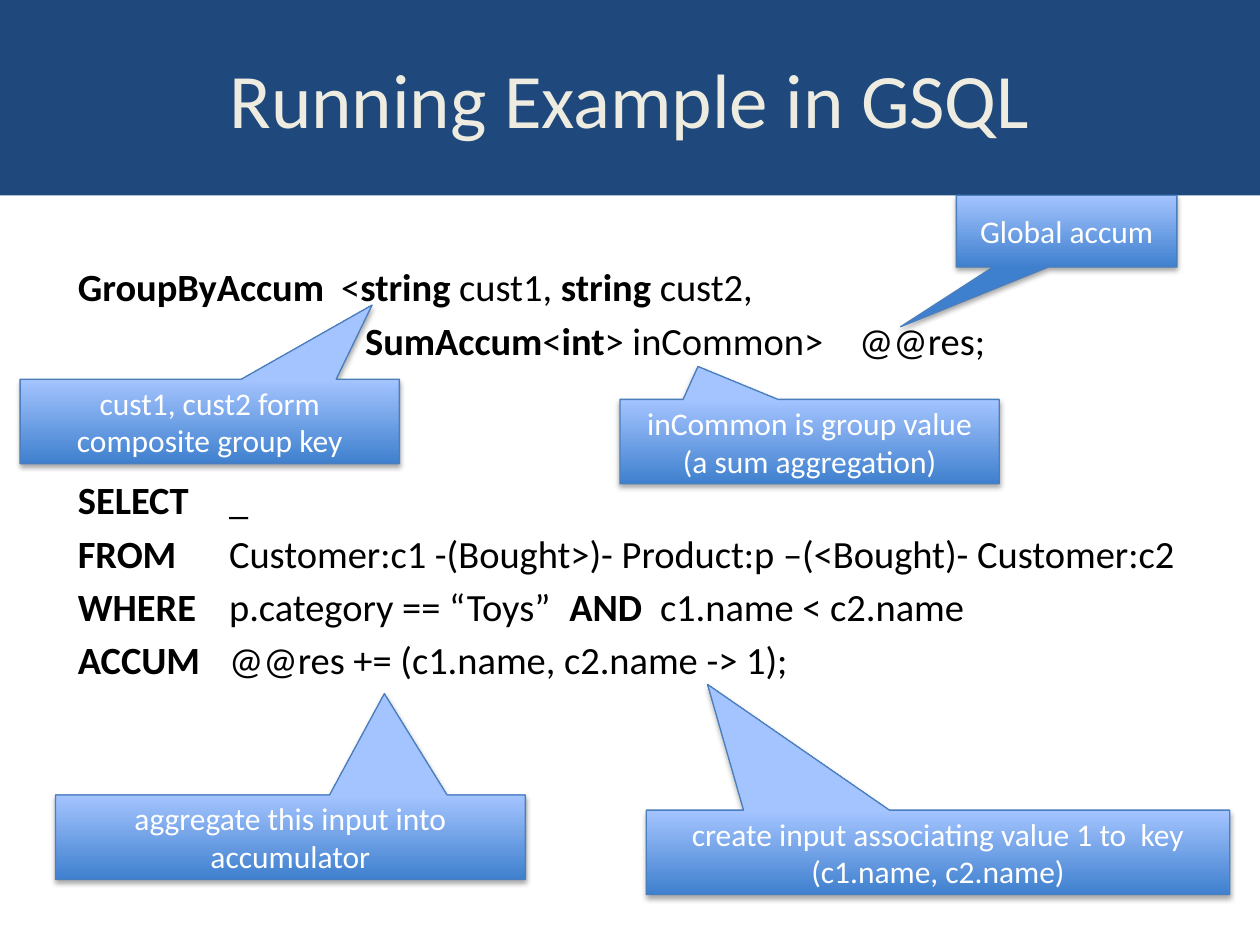
from lxml.etree import SubElement
from pptx import Presentation
from pptx.dml.color import RGBColor
from pptx.enum.shapes import MSO_SHAPE
from pptx.enum.text import MSO_ANCHOR, PP_ALIGN
from pptx.oxml.ns import qn
from pptx.util import Inches, Pt

COLORS = {
    "banner": "1F497D",
    "heading": "EEECE1",
    "code": "000000",
    "callout_low": "3F80CE",
    "callout_high": "A4C4FF",
    "callout_edge": "4B7EBC",
    "callout_text": "FFFFFF",
    "shadow": "000000",
}

CLAUSE_TAB = 1.2
BLOCK_GAP = 65

# Each line: space before in points, tab stops in inches, (text, bold) runs.
CODE_LINES = [
    (0, [2.09], [("GroupByAccum", True), ("\t<", False), ("string", True),
                 (" cust1, ", False), ("string", True), (" cust2,", False)]),
    (4, [2.28, 6.2], [("\t", False), ("SumAccum", True), ("<", False), ("int", True),
                      ("> inCommon>\t@@res;", False)]),
    (BLOCK_GAP, [CLAUSE_TAB], [("SELECT", True), ("\t_", False)]),
    (4, [CLAUSE_TAB], [("FROM", True),
                       ("\tCustomer:c1 -(Bought>)- Product:p –(<Bought)- Customer:c2", False)]),
    (4, [CLAUSE_TAB, 3.9, 4.62], [("WHERE", True), ("\tp.category == “Toys”", False),
                                  ("\tAND", True), ("\tc1.name < c2.name", False)]),
    (4, [CLAUSE_TAB], [("ACCUM", True), ("\t@@res += (c1.name, c2.name -> 1);", False)]),
]

CALLOUTS = [
    ("Global accum", (7.59, 1.55, 1.75, 0.57), (-0.753, 1.331)),
    ("cust1, cust2 form composite group key", (0.16, 3.01, 3.01, 0.67), (0.428, -1.378)),
    ("inCommon is group value (a sum aggregation)", (4.92, 3.17, 3.01, 0.67), (-0.294, -0.89)),
    ("create input associating value 1 to  key (c1.name, c2.name)",
     (5.13, 6.43, 4.63, 0.67), (-0.395, -1.989)),
    ("aggregate this input into accumulator", (0.44, 6.31, 3.73, 0.67), (0.2, -1.701)),
]


class SlideBuilder:
    """Holds the text style and the slide being built."""

    def __init__(self, slide, font="Calibri"):
        self.slide = slide
        self.font = font

    def color(self, name):
        return RGBColor.from_string(COLORS[name])

    def run(self, paragraph, text, size, color, bold=False):
        run = paragraph.add_run()
        run.text = text
        run.font.name = self.font
        run.font.size = Pt(size)
        run.font.bold = bold
        run.font.color.rgb = self.color(color)

    def shape(self, preset, box, text, size, color):
        shape = self.slide.shapes.add_shape(preset, *map(Inches, box))
        shape.shadow.inherit = False
        frame = shape.text_frame
        frame.word_wrap = True
        frame.vertical_anchor = MSO_ANCHOR.MIDDLE
        paragraph = frame.paragraphs[0]
        paragraph.alignment = PP_ALIGN.CENTER
        self.run(paragraph, text, size, color)
        return shape

    def banner(self, text, box):
        banner = self.shape(MSO_SHAPE.RECTANGLE, box, text, 44, "heading")
        banner.fill.solid()
        banner.fill.fore_color.rgb = self.color("banner")
        banner.line.fill.background()

    def code(self, lines, box, top_inset):
        frame = self.slide.shapes.add_textbox(*map(Inches, box)).text_frame
        frame.word_wrap = True
        frame.margin_top = Inches(top_inset)
        for index, (space, stops, runs) in enumerate(lines):
            paragraph = frame.add_paragraph() if index else frame.paragraphs[0]
            paragraph.space_before = Pt(space)
            tabs = SubElement(paragraph._p.get_or_add_pPr(), qn("a:tabLst"))
            for stop in stops:
                SubElement(tabs, qn("a:tab"), pos=str(Inches(stop)), algn="l")
            for text, bold in runs:
                self.run(paragraph, text, 22, "code", bold)

    def callout(self, text, box, tip):
        callout = self.shape(MSO_SHAPE.RECTANGULAR_CALLOUT, box, text, 18, "callout_text")
        callout.adjustments[0], callout.adjustments[1] = tip
        callout.fill.gradient()
        callout.fill.gradient_angle = 90
        for stop, name in zip(callout.fill.gradient_stops, ("callout_low", "callout_high")):
            stop.color.rgb = self.color(name)
        callout.line.color.rgb = self.color("callout_edge")
        callout.line.width = Pt(0.75)
        self.drop_shadow(callout)

    def drop_shadow(self, shape):
        effects = shape._element.spPr.find(qn("a:effectLst"))
        shadow = SubElement(effects, qn("a:outerShdw"), blurRad=str(Pt(3.1)),
                            dist=str(Pt(1.8)), dir="5400000", rotWithShape="0")
        tint = SubElement(shadow, qn("a:srgbClr"), val=COLORS["shadow"])
        SubElement(tint, qn("a:alpha"), val="35000")


def main():
    deck = Presentation()
    deck.slide_width, deck.slide_height = Inches(10), Inches(7.5)
    builder = SlideBuilder(deck.slides.add_slide(deck.slide_layouts[6]))
    builder.banner("Running Example in GSQL", (0, 0, 10, 1.55))
    builder.code(CODE_LINES, (0.52, 1.59, 9, 4.95), top_inset=0.5)
    for text, box, tip in CALLOUTS:
        builder.callout(text, box, tip)
    deck.save("out.pptx")


if __name__ == "__main__":
    main()
